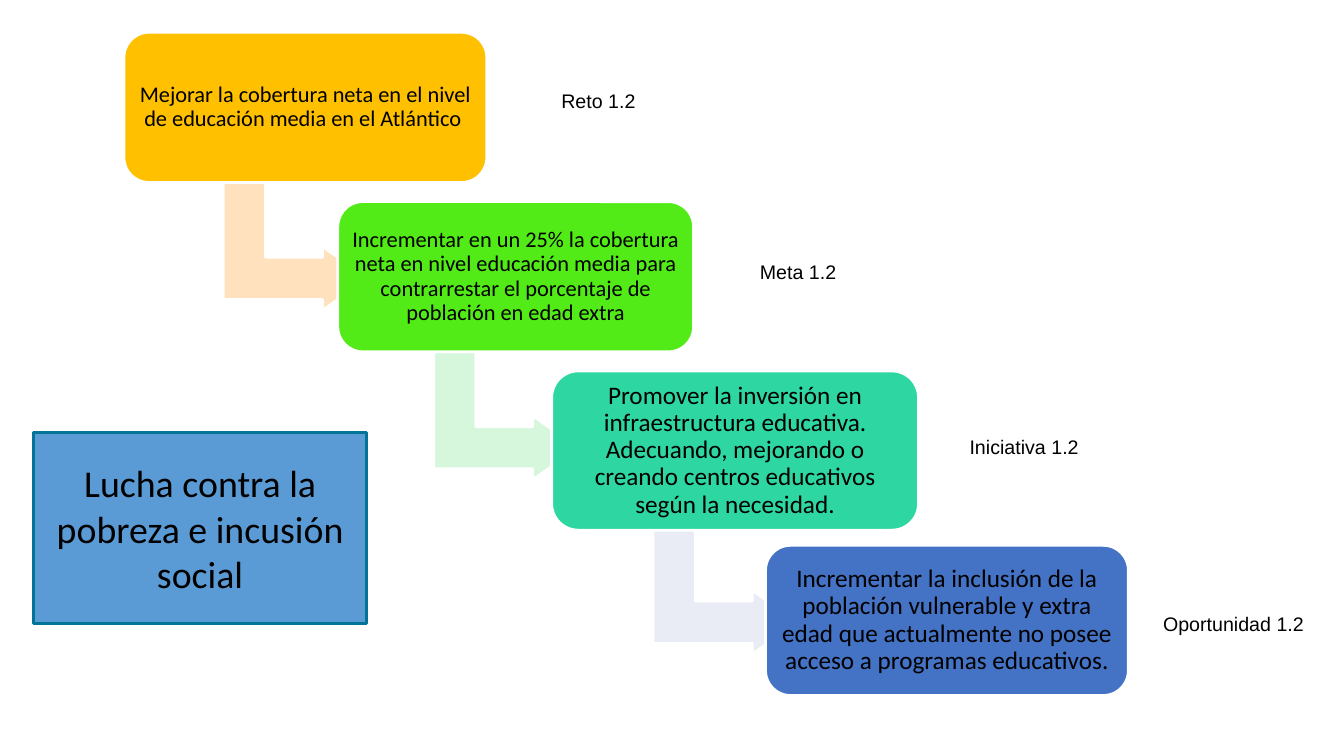
import pptx
import pptx.util
from pptx.dml.color import RGBColor
from pptx.enum.shapes import MSO_SHAPE
from pptx.enum.text import MSO_ANCHOR, MSO_AUTO_SIZE, PP_ALIGN

BLACK = RGBColor(0x00, 0x00, 0x00)
WHITE = RGBColor(0xFF, 0xFF, 0xFF)
AMBER = RGBColor(0xFF, 0xC0, 0x00)
GREEN = RGBColor(0x53, 0xEB, 0x17)
TEAL = RGBColor(0x2E, 0xD7, 0xA1)
BLUE = RGBColor(0x44, 0x72, 0xC4)
PALE_AMBER = RGBColor(0xFF, 0xE2, 0xBD)
PALE_GREEN = RGBColor(0xD6, 0xF7, 0xDB)
PALE_BLUE = RGBColor(0xE9, 0xEC, 0xF5)
SKY = RGBColor(0x5B, 0x9B, 0xD5)
PETROL = RGBColor(0x01, 0x74, 0x97)

COLS, ROWS = 160, 90
FIRST_COL, COL_STEP = 14.76, 25.46
ARROW_W, ARROW_H = 15.24, 17.28

# text, size, top row, width, height, fill, colour of the arrow leaving the step
STEPS = [
    ("Mejorar la cobertura neta en el nivel de educación media en el Atlántico ",
     16, 3.84, 43.2, 17.88, AMBER, PALE_AMBER),
    ("Incrementar en un 25% la cobertura neta en nivel educación media para "
     "contrarrestar el porcentaje de población en edad extra",
     16, 24, 42.36, 17.88, GREEN, PALE_GREEN),
    ("Promover la inversión en infraestructura educativa. Adecuando, mejorando "
     "o creando centros educativos según la necesidad.",
     18, 44.16, 43.68, 18.96, TEAL, PALE_BLUE),
    ("Incrementar la inclusión de la población vulnerable y extra edad que "
     "actualmente no posee acceso a programas educativos.",
     18, 64.92, 43.2, 17.88, BLUE, None),
]
LABELS = [
    ("Reto 1.2", 65.64, 9.96, 11.28),
    ("Meta 1.2", 89.28, 30.36, 11.52),
    ("Iniciativa 1.2", 114.24, 51.24, 15.48),
    ("Oportunidad 1.2", 137.28, 72.24, 19.2),
]


class StairSlide:
    """Draws on one slide; positions and sizes are grid columns and rows."""

    def __init__(self, prs):
        self.s = prs.slides.add_slide(prs.slide_layouts[6])
        self.col = prs.slide_width / COLS
        self.row = prs.slide_height / ROWS

    def frame(self, x, y, w, h):
        return [round(v) for v in (x * self.col, y * self.row,
                                   w * self.col, h * self.row)]

    def set_text(self, sp, text, size, font):
        tf = sp.text_frame
        tf.text = text
        r = tf.paragraphs[0].runs[0]
        r.font.size = pptx.util.Pt(size)
        r.font.name = font
        r.font.color.rgb = BLACK
        return tf

    def shape(self, kind, x, y, w, h, fill, line=WHITE):
        sp = self.s.shapes.add_shape(kind, *self.frame(x, y, w, h))
        sp.shadow.inherit = False
        sp.fill.solid()
        sp.fill.fore_color.rgb = fill
        sp.line.color.rgb = line
        sp.line.width = pptx.util.Pt(2)
        return sp

    def centred(self, sp, text, size):
        tf = self.set_text(sp, text, size, "Calibri")
        tf.word_wrap = True
        tf.vertical_anchor = MSO_ANCHOR.MIDDLE
        tf.paragraphs[0].alignment = PP_ALIGN.CENTER
        return tf

    def step(self, text, size, x, y, w, h, fill):
        sp = self.shape(MSO_SHAPE.ROUNDED_RECTANGLE, x, y, w, h, fill)
        tf = self.centred(sp, text, size)
        tf.margin_left = tf.margin_right = pptx.util.Inches(0.07)
        tf.margin_top = tf.margin_bottom = pptx.util.Inches(0.07)
        tf.paragraphs[0].line_spacing = 0.9

    def arrow(self, x, y, fill):
        sp = self.shape(MSO_SHAPE.BENT_UP_ARROW, x, y, ARROW_W, ARROW_H, fill)
        sp.rotation = 90
        for i, value in enumerate((0.33, 0.25, 0.36)):
            sp.adjustments[i] = value

    def panel(self, text, size, x, y, w, h):
        self.centred(self.shape(MSO_SHAPE.RECTANGLE, x, y, w, h, SKY, PETROL),
                     text, size)

    def label(self, text, x, y, w):
        sp = self.s.shapes.add_textbox(*self.frame(x, y, w, 4.08))
        tf = self.set_text(sp, text, 14, "Arial")
        tf.word_wrap = False
        tf.auto_size = MSO_AUTO_SIZE.SHAPE_TO_FIT_TEXT


def main():
    prs = pptx.Presentation()
    prs.slide_width = pptx.util.Emu(12192000)
    prs.slide_height = pptx.util.Emu(6858000)
    stair = StairSlide(prs)

    for label in LABELS:
        stair.label(*label)
    stair.panel("Lucha contra la pobreza e incusión social", 27,
                3.96, 51.48, 39.72, 22.8)

    for i, (text, size, y, w, h, fill, arrow_fill) in enumerate(STEPS):
        x = FIRST_COL + i * COL_STEP
        if arrow_fill is not None:
            next_top = STEPS[i + 1][2]
            stair.arrow(x + w / 2 - 8.76, next_top - 3.3, arrow_fill)
        stair.step(text, size, x, y, w, h, fill)

    prs.save("out.pptx")


if __name__ == "__main__":
    main()
